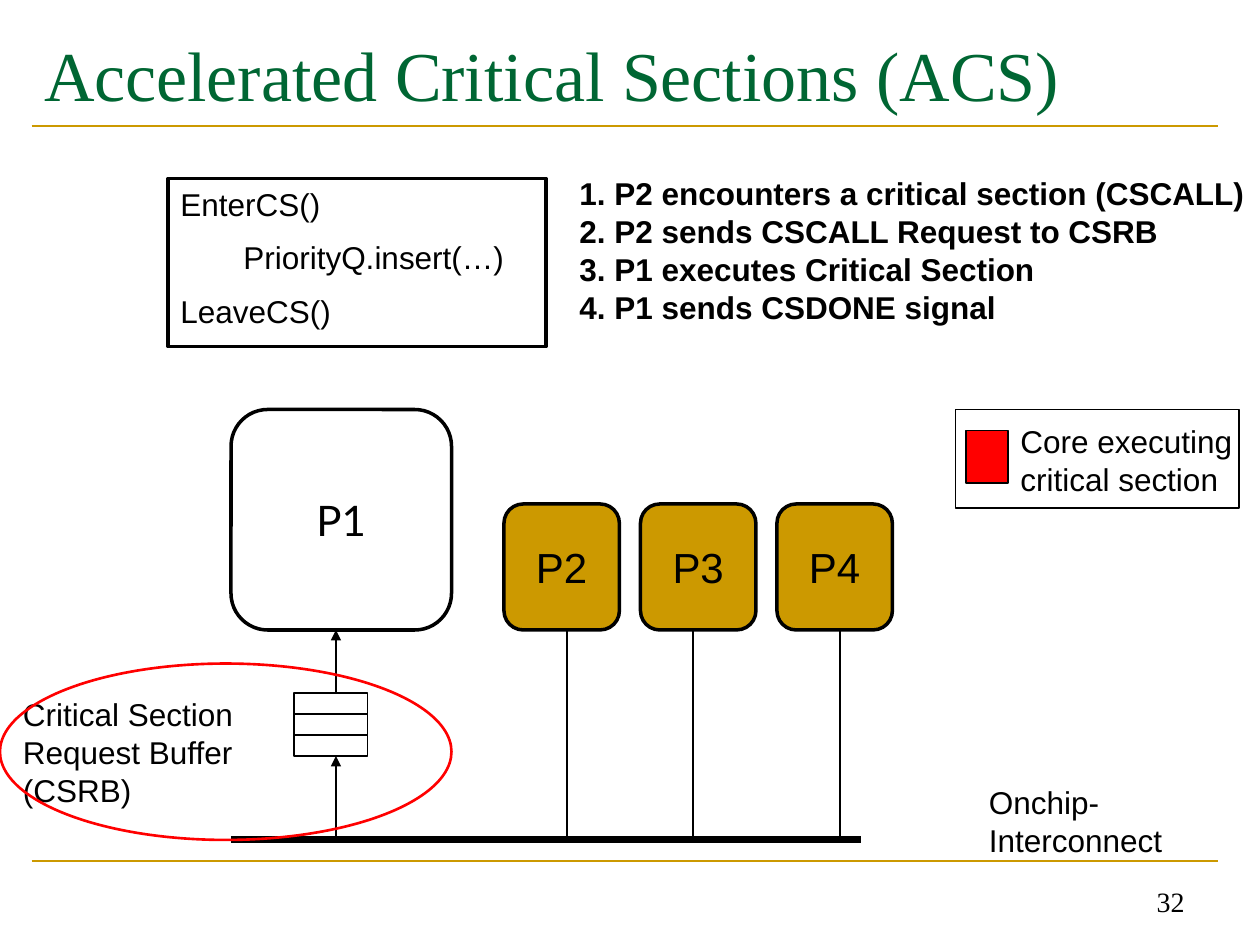
from pptx import Presentation
from pptx.dml.color import RGBColor
from pptx.enum.shapes import MSO_CONNECTOR, MSO_SHAPE
from pptx.enum.text import MSO_ANCHOR, MSO_AUTO_SIZE, PP_ALIGN
from pptx.oxml.ns import qn
from pptx.util import Inches, Pt
from lxml.etree import SubElement

COLUMNS, ROWS = 120, 90
SLIDE_WIDTH, SLIDE_HEIGHT = Inches(10), Inches(7.5)
BLACK, WHITE, RED = "000000", "FFFFFF", "FF0000"
GOLD, GREEN = "CC9900", "006633"
CORE_BOTTOM, BUS_ROW = 60, 80


def color(value):
    return RGBColor.from_string(value)


def across(columns):
    return round(SLIDE_WIDTH * columns / COLUMNS)


def down(rows):
    return round(SLIDE_HEIGHT * rows / ROWS)


def area(column, row, columns, rows):
    return across(column), down(row), across(columns), down(rows)


def write(paragraph, text, size=18, font="Arial", ink=BLACK, bold=False):
    for index, part in enumerate(text.split("\n")):
        if index:
            paragraph.add_line_break()
        run = paragraph.add_run()
        run.text = part
        run.font.size = Pt(size)
        run.font.name = font
        run.font.bold = bold
        run.font.color.rgb = color(ink)


def fill_frame(frame, lines, gap=0, align=PP_ALIGN.LEFT,
               anchor=MSO_ANCHOR.TOP, wrap=True, **style):
    frame.word_wrap = wrap
    frame.auto_size = MSO_AUTO_SIZE.NONE
    frame.vertical_anchor = anchor
    for index, text in enumerate(lines):
        paragraph = frame.add_paragraph() if index else frame.paragraphs[0]
        paragraph.alignment = align
        paragraph.space_before = Pt(gap if index else 0)
        write(paragraph, text, **style)


def add_label(slide, place, lines, **style):
    label = slide.shapes.add_textbox(*area(*place))
    fill_frame(label.text_frame, lines, **style)


def add_block(slide, kind, place, fill=None, line=BLACK, weight=0.75):
    block = slide.shapes.add_shape(kind, *area(*place))
    block.shadow.inherit = False
    if fill:
        block.fill.solid()
        block.fill.fore_color.rgb = color(fill)
    else:
        block.fill.background()
    block.line.color.rgb = color(line)
    block.line.width = Pt(weight)
    return block


def add_wire(slide, start, end, ink=BLACK, weight=0.75, arrow=False):
    wire = slide.shapes.add_connector(
        MSO_CONNECTOR.STRAIGHT, across(start[0]), down(start[1]),
        across(end[0]), down(end[1]))
    wire.line.color.rgb = color(ink)
    wire.line.width = Pt(weight)
    if arrow:
        SubElement(wire.line._get_or_add_ln(), qn("a:tailEnd"), type="triangle")
    SubElement(wire._element.spPr, qn("a:effectLst"))


def add_core(slide, name, place, fill, font="Arial"):
    core = add_block(slide, MSO_SHAPE.ROUNDED_RECTANGLE, place, fill, weight=2)
    fill_frame(core.text_frame, [name], align=PP_ALIGN.CENTER,
               anchor=MSO_ANCHOR.MIDDLE, size=24, font=font)


def add_heading(slide):
    for row in (82, 12):
        add_wire(slide, (3, row), (116, row), GOLD, 1.5)
    title = slide.shapes.title
    title.left, title.top, title.width, title.height = area(3, 2, 113, 10)
    fill_frame(title.text_frame, ["Accelerated Critical Sections (ACS)"],
               anchor=MSO_ANCHOR.MIDDLE, size=40, font="Times New Roman", ink=GREEN)
    add_label(slide, (86, 82, 28, 6), ["32"], align=PP_ALIGN.RIGHT,
              anchor=MSO_ANCHOR.BOTTOM, size=16, font="Times New Roman")


def add_code(slide):
    code = add_block(slide, MSO_SHAPE.RECTANGLE, (16, 17, 36, 16), weight=2)
    fill_frame(code.text_frame,
               ["EnterCS()", "PriorityQ.insert(…)", "LeaveCS()"], gap=9)
    insert_call = code.text_frame.paragraphs[1]
    insert_call.level = 1
    insert_call._p.get_or_add_pPr().set("marL", str(across(6)))
    insert_call._p.get_or_add_pPr().set("indent", "0")


def add_steps(slide):
    steps = ["P2 encounters a critical section (CSCALL)",
             "P2 sends CSCALL Request to CSRB",
             "P1 executes Critical Section",
             "P1 sends CSDONE signal"]
    add_label(slide, (54, 16, 65.8, 15.6),
              [f"{number}. {step}" for number, step in enumerate(steps, 1)],
              wrap=False, bold=True)


def add_request_buffer(slide):
    for entry in range(3):
        add_block(slide, MSO_SHAPE.RECTANGLE, (28, 66 + 2 * entry, 7, 2), WHITE)
    for start, end in ((BUS_ROW, 72), (66, CORE_BOTTOM)):
        add_wire(slide, (32, start), (32, end), arrow=True)
    add_label(slide, (1, 65.6, 25, 12),
              ["Critical Section\nRequest Buffer (CSRB)"])


def add_legend(slide):
    add_block(slide, MSO_SHAPE.RECTANGLE, (92, 41, 4, 5), RED)
    add_block(slide, MSO_SHAPE.RECTANGLE, (91, 39, 27, 9.4))
    add_label(slide, (96, 39.6, 24, 8.4), ["Core executing critical section"])


def add_cores(slide):
    for column in (54, 66, 80):
        add_wire(slide, (column, CORE_BOTTOM), (column, BUS_ROW))
    for index, name in enumerate(["P2", "P3", "P4"]):
        add_core(slide, name, (48 + 13 * index, 48, 11, 12), GOLD)
    add_core(slide, "P1", (22, 39, 21, 21), WHITE, font="Lato")


def main():
    deck = Presentation()
    deck.slide_width, deck.slide_height = SLIDE_WIDTH, SLIDE_HEIGHT
    slide = deck.slides.add_slide(deck.slide_layouts.get_by_name("Title Only"))
    add_heading(slide)
    add_wire(slide, (22, BUS_ROW), (82, BUS_ROW), weight=4)
    add_code(slide)
    add_label(slide, (93, 74, 27, 8.4), ["Onchip-Interconnect"])
    add_request_buffer(slide)
    add_steps(slide)
    add_legend(slide)
    add_cores(slide)
    add_block(slide, MSO_SHAPE.OVAL, (0, 63.2, 43, 16.8), line=RED, weight=1.5)
    deck.save("out.pptx")


if __name__ == "__main__":
    main()
